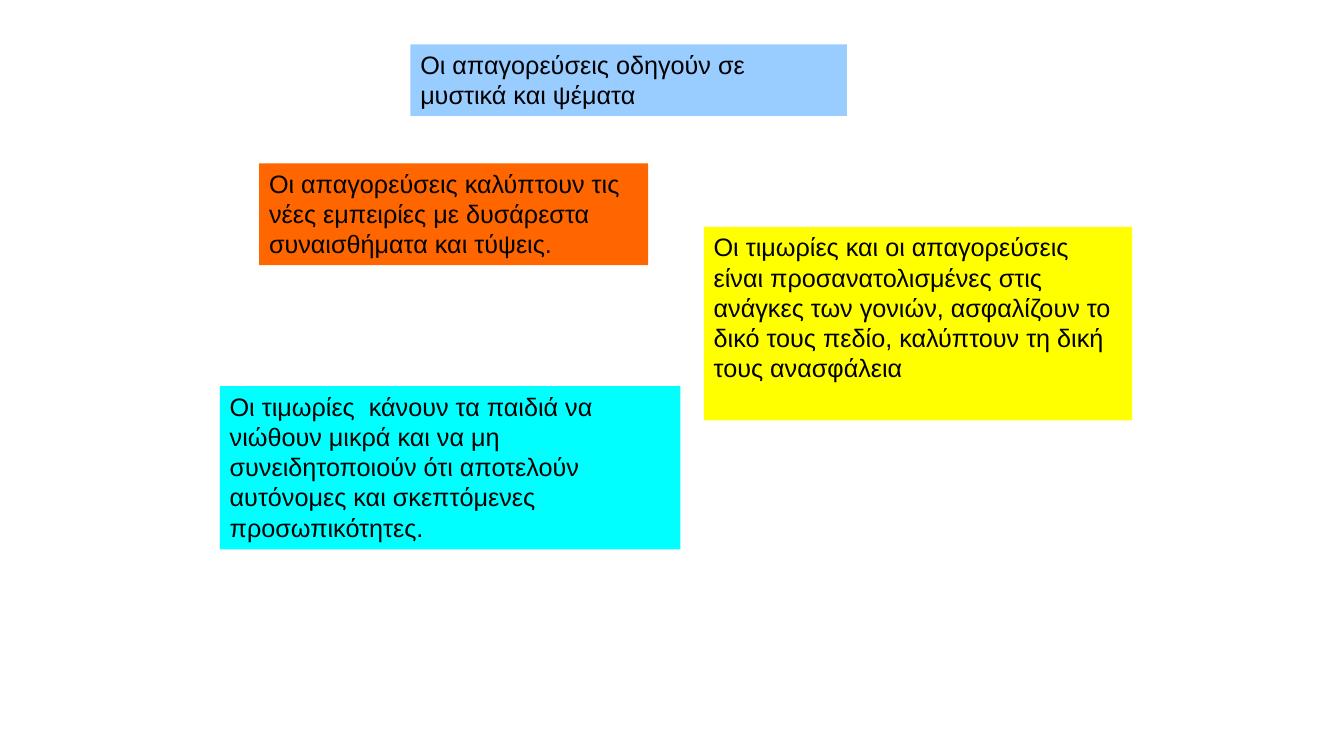
from pptx import Presentation
from pptx.dml.color import RGBColor
from pptx.enum import shapes, text
from pptx.util import Inches, Pt

BLACK = RGBColor(0x00, 0x00, 0x00)
LIGHT_BLUE = RGBColor(0x99, 0xCC, 0xFF)
ORANGE = RGBColor(0xFF, 0x66, 0x00)
CYAN = RGBColor(0x00, 0xFF, 0xFF)
YELLOW = RGBColor(0xFF, 0xFF, 0x00)

prs = Presentation()
prs.slide_width, prs.slide_height = Inches(13.33), Inches(7.5)
s = prs.slides.add_slide(prs.slide_layouts[6])

# Statements: left, top, width, height, fill, wording
statements = [
    (4.07, 0.44, 4.33, 0.71, LIGHT_BLUE,
     "Οι απαγορεύσεις οδηγούν σε μυστικά και ψέματα"),
    (2.57, 1.62, 3.86, 1.01, ORANGE,
     "Οι απαγορεύσεις καλύπτουν τις νέες εμπειρίες με δυσάρεστα "
     "συναισθήματα και τύψεις."),
    (2.18, 3.83, 4.57, 1.62, CYAN,
     "Οι τιμωρίες  κάνουν τα παιδιά να νιώθουν μικρά και να μη "
     "συνειδητοποιούν ότι αποτελούν αυτόνομες και σκεπτόμενες "
     "προσωπικότητες."),
    (6.98, 2.25, 4.25, 1.92, YELLOW,
     "Οι τιμωρίες και οι απαγορεύσεις είναι προσανατολισμένες στις "
     "ανάγκες των γονιών, ασφαλίζουν το δικό τους πεδίο, καλύπτουν "
     "τη δική τους ανασφάλεια"),
]
frame_format = {
    "word_wrap": True,
    "auto_size": text.MSO_AUTO_SIZE.SHAPE_TO_FIT_TEXT,
    "vertical_anchor": text.MSO_ANCHOR.TOP,
}
font_format = {"name": "Arial", "size": Pt(18)}

# Coloured boxes
for left, top, width, height, fill, wording in statements:
    sp = s.shapes.add_shape(shapes.MSO_SHAPE.RECTANGLE, Inches(left),
                            Inches(top), Inches(width), Inches(height))
    sp.shadow.inherit = False
    sp.fill.solid()
    sp.fill.fore_color.rgb = fill
    sp.line.fill.background()
    tf = sp.text_frame
    for key, value in frame_format.items():
        setattr(tf, key, value)
    p = tf.paragraphs[0]
    p.alignment = text.PP_ALIGN.LEFT
    r = p.add_run()
    r.text = wording
    for key, value in font_format.items():
        setattr(r.font, key, value)
    r.font.color.rgb = BLACK

prs.save("out.pptx")
